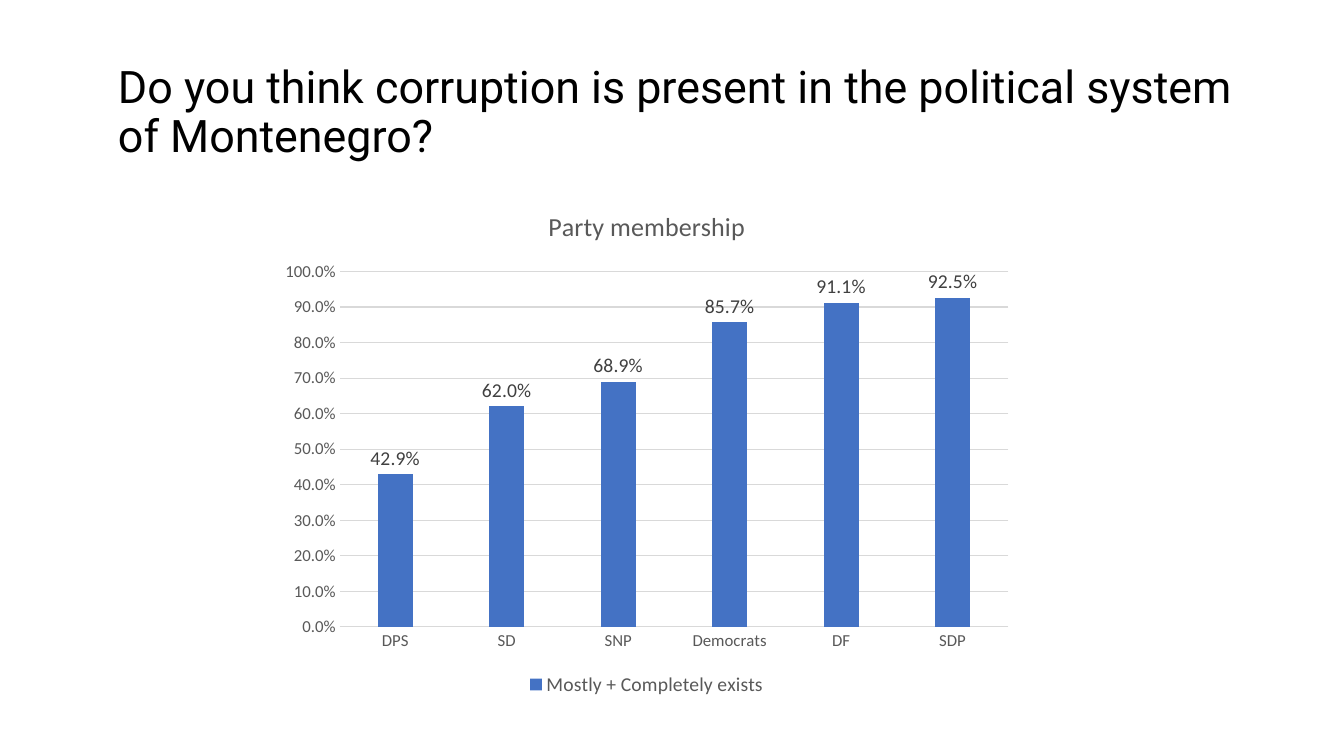
from dataclasses import dataclass

from pptx import Presentation
from pptx.chart.data import CategoryChartData
from pptx.dml.color import RGBColor
from pptx.enum.chart import XL_CHART_TYPE, XL_LABEL_POSITION, XL_LEGEND_POSITION, XL_TICK_MARK
from pptx.enum.text import MSO_ANCHOR, PP_ALIGN
from pptx.util import Inches, Pt

COLUMNS = XL_CHART_TYPE.COLUMN_CLUSTERED
ABOVE_BAR = XL_LABEL_POSITION.OUTSIDE_END
BOTTOM = XL_LEGEND_POSITION.BOTTOM
NO_TICK = XL_TICK_MARK.NONE
MIDDLE = MSO_ANCHOR.MIDDLE
LEFT = PP_ALIGN.LEFT


@dataclass(frozen=True)
class Theme:
    question_font: str = "Roboto"
    chart_font: str = "Calibri"
    question_size: float = 32
    heading_size: float = 18.6
    label_size: float = 14
    axis_size: float = 12
    black: str = "000000"
    dark_grey: str = "404040"
    grey: str = "595959"
    rule: str = "D9D9D9"
    bar: str = "4472C4"
    rule_width: float = 0.75


THEME = Theme()
PERCENT = "###0.0%"
SHARE_BY_PARTY = {
    "DPS": 0.429,
    "SD": 0.62,
    "SNP": 0.689,
    "Democrats": 0.857,
    "DF": 0.911,
    "SDP": 0.925,
}


def style_font(font, family, size, color):
    font.name = family
    font.size = Pt(size)
    font.bold = False
    font.color.rgb = RGBColor.from_string(color)


def style_rule(line):
    line.color.rgb = RGBColor.from_string(THEME.rule)
    line.width = Pt(THEME.rule_width)


deck = Presentation()
deck.slide_width, deck.slide_height = Inches(13.33), Inches(7.5)
slide = deck.slides.add_slide(deck.slide_layouts[5])

# Question
question = slide.shapes.title
question.left, question.top = Inches(1.07), Inches(0.4)
question.width, question.height = Inches(11.5), Inches(1.45)
question.text_frame.text = "Do you think corruption is present in the political system of Montenegro?"
question.text_frame.word_wrap = True
question.text_frame.vertical_anchor = MIDDLE
wording = question.text_frame.paragraphs[0]
wording.alignment = LEFT
wording.line_spacing = 0.9
style_font(wording.font, THEME.question_font, THEME.question_size, THEME.black)

# Answers by party
answers = CategoryChartData(number_format=PERCENT)
answers.categories = SHARE_BY_PARTY.keys()
answers.add_series("Mostly + Completely exists", SHARE_BY_PARTY.values())
chart = slide.shapes.add_chart(
    COLUMNS, Inches(2.68), Inches(1.86), Inches(7.47), Inches(5.09), answers
).chart
style_font(chart.font, THEME.chart_font, 10, THEME.black)

chart.has_title = True
chart.chart_title.include_in_layout = False
heading = chart.chart_title.text_frame
heading.text = "Party membership"
style_font(heading.paragraphs[0].font, THEME.chart_font, THEME.heading_size, THEME.grey)

chart.has_legend = True
chart.legend.position = BOTTOM
chart.legend.include_in_layout = False
style_font(chart.legend.font, THEME.chart_font, THEME.label_size, THEME.grey)

parties, shares = chart.category_axis, chart.value_axis
for axis in (parties, shares):
    axis.major_tick_mark = axis.minor_tick_mark = NO_TICK
    style_font(axis.tick_labels.font, THEME.chart_font, THEME.axis_size, THEME.grey)
style_rule(parties.format.line)
shares.format.line.fill.background()
shares.minimum_scale, shares.maximum_scale, shares.major_unit = 0, 1, 0.1
shares.tick_labels.number_format = PERCENT
shares.tick_labels.number_format_is_linked = False
shares.has_major_gridlines = True
style_rule(shares.major_gridlines.format.line)

bars = chart.plots[0]
bars.gap_width, bars.overlap = 219, -27
bars.vary_by_categories = False
bar_fill = bars.series[0].format.fill
bar_fill.solid()
bar_fill.fore_color.rgb = RGBColor.from_string(THEME.bar)
bars.has_data_labels = True
labels = bars.data_labels
labels.show_value = True
labels.position = ABOVE_BAR
labels.number_format = PERCENT
labels.number_format_is_linked = False
style_font(labels.font, THEME.chart_font, THEME.label_size, THEME.dark_grey)

deck.save("out.pptx")
